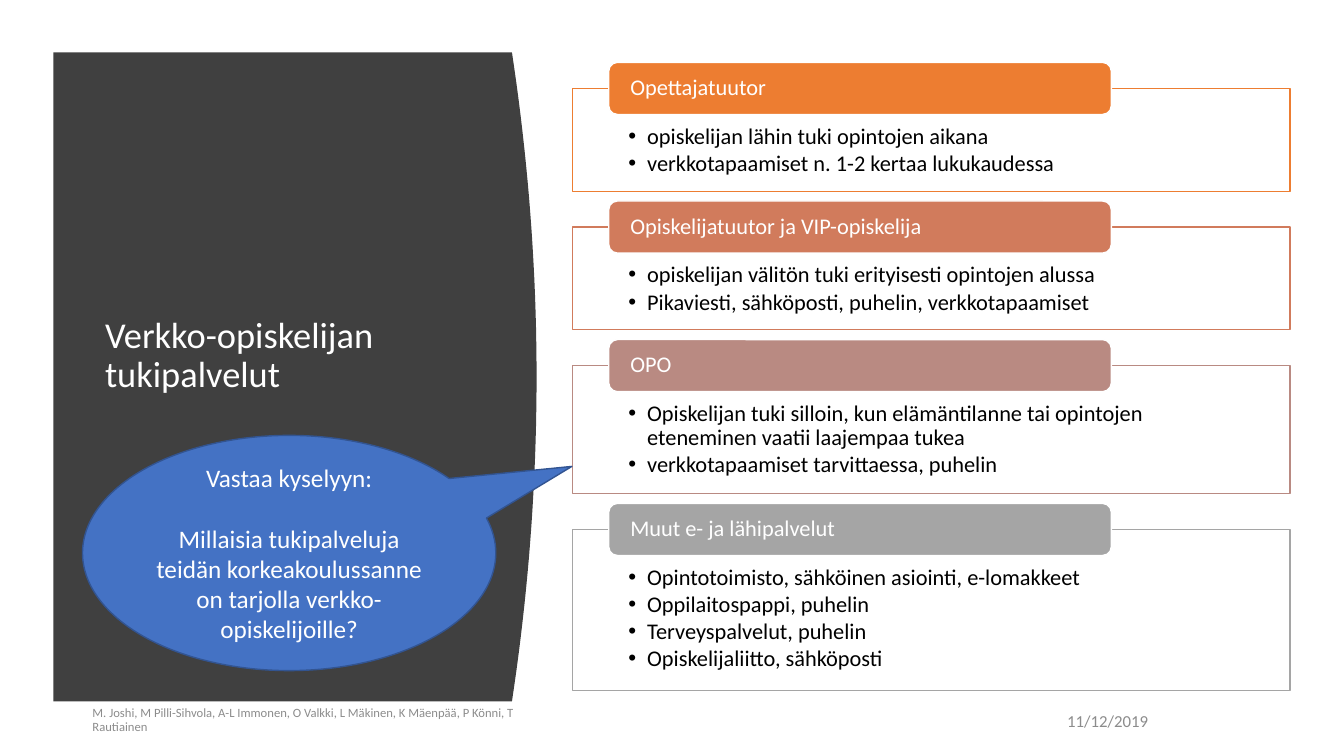
from dataclasses import dataclass

from lxml import etree
from pptx import Presentation
from pptx import util as u
from pptx.dml.color import RGBColor
from pptx.enum import shapes, text
from pptx.oxml.ns import qn

Pt = u.Pt
MID, TOP = text.MSO_ANCHOR.MIDDLE, text.MSO_ANCHOR.TOP
LEFT, RIGHT, CENTER = text.PP_ALIGN.LEFT, text.PP_ALIGN.RIGHT, text.PP_ALIGN.CENTER


@dataclass(frozen=True)
class Theme:
    font: str = "Calibri"
    white: str = "FFFFFF"
    black: str = "000000"
    dark: str = "404040"
    gray: str = "8C8C8C"
    blue: str = "4472C4"
    edge: str = "325491"
    title: int = 26
    call: int = 18
    body: int = 16
    date: int = 12
    foot: int = 9


class Deck:
    def __init__(self, theme):
        self.theme = theme
        self.prs = Presentation()
        self.prs.slide_width, self.prs.slide_height = Pt(960), Pt(540)
        self.slide = self.prs.slides.add_slide(self.prs.slide_layouts[6])

    def paint(self, shape, fill, line=None):
        shape.shadow.inherit = False
        shape.fill.solid()
        shape.fill.fore_color.rgb = RGBColor.from_string(fill)
        if line:
            shape.line.color.rgb = RGBColor.from_string(line)
            shape.line.width = Pt(1)
        else:
            shape.line.fill.background()

    def words(self, shape, lines, size, color, anchor=MID, align=LEFT,
              pad=(7.2, 3.6, 7.2, 3.6), lead=0.9, gap=0, dots=False):
        """Fill a shape with paragraphs; gap is the space between them."""
        frame = shape.text_frame
        frame.word_wrap = True
        frame.vertical_anchor = anchor
        (frame.margin_left, frame.margin_top,
         frame.margin_right, frame.margin_bottom) = map(Pt, pad)
        frame.text = "\n".join(lines)
        for i, para in enumerate(frame.paragraphs):
            para.alignment, para.line_spacing = align, lead
            if i:
                para.space_before = Pt(gap)
            if dots:
                self.dot(para)
            font = para.runs[0].font
            font.name, font.size = self.theme.font, Pt(size)
            font.color.rgb = RGBColor.from_string(color)

    def dot(self, para):
        para.level = 1
        props = para._p.get_or_add_pPr()
        props.set("marL", str(Pt(13.5)))
        props.set("indent", str(-Pt(13.5)))
        etree.SubElement(props, qn("a:buFont")).set("typeface", "Arial")
        etree.SubElement(props, qn("a:buChar")).set("char", "•")

    def shape(self, kind, box, fill, line=None):
        item = self.slide.shapes.add_shape(kind, *map(Pt, box))
        self.paint(item, fill, line)
        return item

    def label(self, box, line, size, color, **style):
        item = self.slide.shapes.add_textbox(*map(Pt, box))
        self.words(item, [line], size, color, **style)

    def curtain(self, left, top, foot, right, bulge):
        """Draw the dark side panel, whose right edge is a parabola."""
        mid, half, steps = (top + foot) / 2, (foot - top) / 2, 40
        marks = [2 * i / steps - 1 for i in range(steps + 1)]
        edge = [(Pt(right - bulge * t * t), Pt(mid + half * t)) for t in marks]
        form = self.slide.shapes.build_freeform(Pt(left), Pt(top))
        form.add_line_segments(edge + [(Pt(left), Pt(foot))], close=True)
        self.paint(form.convert_to_shape(), self.theme.dark)

    def panel(self, top, high, color, head, items):
        look = self.theme
        rect = self.shape(shapes.MSO_SHAPE.RECTANGLE, (409, top, 512.6, high),
                          look.white, color)
        tone = rect._element.spPr.find(qn("a:solidFill")).find(qn("a:srgbClr"))
        etree.SubElement(tone, qn("a:alpha")).set("val", "90000")
        self.words(rect, items, look.body, look.black, TOP,
                   pad=(39.8, 26, 39.8, 8.9), gap=2.2, dots=True)
        tab = self.shape(shapes.MSO_SHAPE.ROUNDED_RECTANGLE,
                         (434.8, top - 18.6, 359, 37.2), color, look.white)
        self.words(tab, [head], look.body, look.white, pad=(13.6, 0, 13.6, 0))

    def callout(self, box, tip, lines):
        look = self.theme
        item = self.shape(shapes.MSO_SHAPE.OVAL_CALLOUT, box, look.blue, look.edge)
        item.adjustments[0], item.adjustments[1] = tip
        self.words(item, lines, look.call, look.white, align=CENTER, lead=1, gap=22)


PANELS = [
    (73.4, "ED7D31", "Opettajatuutor",
     ["opiskelijan lähin tuki opintojen aikana",
      "verkkotapaamiset n. 1-2 kertaa lukukaudessa"]),
    (73.4, "D17B5C", "Opiskelijatuutor ja VIP-opiskelija",
     ["opiskelijan välitön tuki erityisesti opintojen alussa",
      "Pikaviesti, sähköposti, puhelin, verkkotapaamiset"]),
    (91.4, "B98A82", "OPO",
     ["Opiskelijan tuki silloin, kun elämäntilanne tai opintojen "
      "eteneminen vaatii laajempaa tukea",
      "verkkotapaamiset tarvittaessa, puhelin"]),
    (115.2, "A5A5A5", "Muut e- ja lähipalvelut",
     ["Opintotoimisto, sähköinen asiointi, e-lomakkeet",
      "Oppilaitospappi, puhelin",
      "Terveyspalvelut, puhelin",
      "Opiskelijaliitto, sähköposti"]),
]


def main():
    look = Theme()
    deck = Deck(look)
    deck.curtain(38.2, 37.4, 501.1, 383.3, 17.6)
    deck.label((68, 80, 269, 348.8), "Verkko-opiskelijan tukipalvelut",
               look.title, look.white)
    deck.label((59, 500.4, 324, 28.8),
               "M. Joshi, M Pilli-Sihvola, A-L Immonen, O Valkki, L Mäkinen, "
               "K Mäenpää, P Könni, T Rautiainen", look.foot, look.gray)
    deck.label((611.3, 500.4, 216, 28.8), "11/12/2019", look.date, look.gray,
               align=RIGHT, lead=1)
    top = 63.2
    for high, color, head, items in PANELS:
        deck.panel(top, high, color, head, items)
        top += high + 25.6
    deck.callout((59, 311, 295.2, 168), (0.684, -0.368),
                 ["Vastaa kyselyyn:",
                  "Millaisia tukipalveluja teidän korkeakoulussanne "
                  "on tarjolla verkko-opiskelijoille?"])
    deck.prs.save("out.pptx")


if __name__ == "__main__":
    main()
